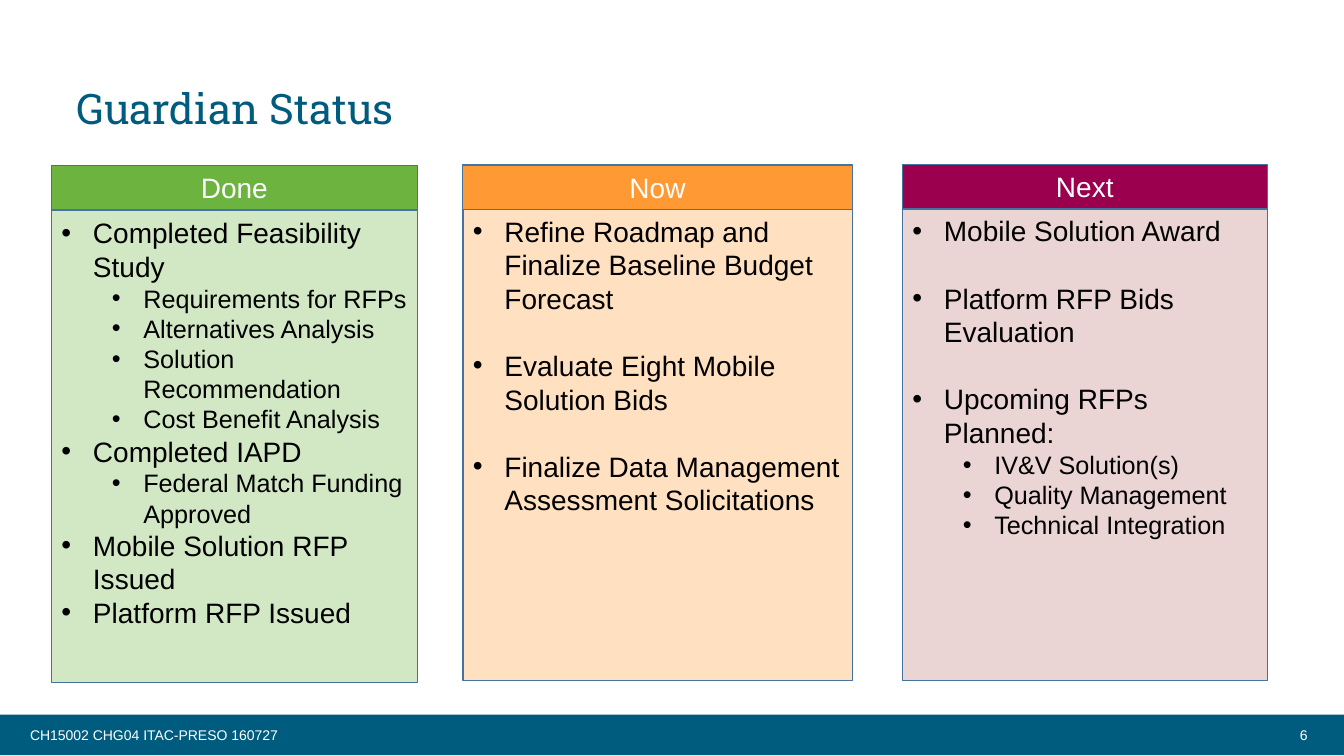
"""Build the Guardian Status slide with its Done, Now and Next columns."""
from dataclasses import dataclass

from lxml import etree
from pptx import Presentation
from pptx import util as u
from pptx.dml.color import RGBColor
from pptx.enum import shapes, text
from pptx.oxml.ns import qn


@dataclass(frozen=True)
class Theme:
    heading_font: str = "Roboto Slab"
    body_font: str = "Arial"
    teal: str = "005C7E"
    outline: str = "43739E"
    white: str = "FFFFFF"
    black: str = "000000"
    green: str = "6CB33F"
    orange: str = "FF9933"
    plum: str = "9A004D"
    rose: str = "EBD4D4"
    title_size: float = 30
    item_size: float = 20
    subitem_size: float = 18
    footer_size: float = 10


@dataclass(frozen=True)
class Item:
    text: str
    level: int = 0
    gap: float = 0


@dataclass(frozen=True)
class Column:
    heading: str
    placeholder: int
    left: float
    top: float
    body_top: float
    width: float
    colour: str
    body_colour: str
    opacity: int
    items: tuple[Item, ...]


@dataclass(frozen=True)
class FooterText:
    text: str
    left: float
    width: float
    alignment: text.PP_ALIGN


THEME = Theme()
HEADING_HEIGHT = 31.7
BODY_HEIGHT = 337
INDENT = 22.5
LEVEL_STEP = 36
BLANK_LINE = 24

COLUMNS = (
    Column("Done", 1, 36.7, 118.3, 150.4, 261.4, THEME.green, THEME.green, 30, (
        Item("Completed Feasibility Study"),
        Item("Requirements for RFPs", 1),
        Item("Alternatives Analysis", 1),
        Item("Solution Recommendation", 1),
        Item("Cost Benefit Analysis", 1),
        Item("Completed IAPD"),
        Item("Federal Match Funding Approved", 1),
        Item("Mobile Solution RFP Issued"),
        Item("Platform RFP Issued"),
    )),
    Column("Now", 2, 330.6, 118, 149.3, 278.2, THEME.orange, THEME.orange, 30, (
        Item("Refine Roadmap and Finalize Baseline Budget Forecast"),
        Item("Evaluate Eight Mobile Solution Bids", gap=BLANK_LINE),
        Item("Finalize Data Management Assessment Solicitations", gap=BLANK_LINE),
    )),
    Column("Next", 3, 644.5, 117.5, 149.2, 260.8, THEME.plum, THEME.rose, 100, (
        Item("Mobile Solution Award"),
        Item("Platform RFP Bids Evaluation", gap=BLANK_LINE),
        Item("Upcoming RFPs Planned:", gap=BLANK_LINE),
        Item("IV&V Solution(s)", 1),
        Item("Quality Management", 1),
        Item("Technical Integration", 1),
    )),
)

FOOTERS = (
    FooterText("CH15002 CHG04 ITAC-PRESO 160727", 14.4, 656, text.PP_ALIGN.LEFT),
    FooterText("6", 779, 162, text.PP_ALIGN.RIGHT),
)


def place(shape, left: float, top: float, width: float, height: float) -> None:
    shape.left, shape.top = u.Pt(left), u.Pt(top)
    shape.width, shape.height = u.Pt(width), u.Pt(height)


def paint(shape, colour: str, opacity: int = 100, outlined: bool = True) -> None:
    shape.fill.solid()
    shape.fill.fore_color.rgb = RGBColor.from_string(colour)
    if opacity < 100:
        fill_colour = shape.fill._xPr.find(".//" + qn("a:srgbClr"))
        etree.SubElement(fill_colour, qn("a:alpha"), val=str(opacity * 1000))
    if outlined:
        shape.line.color.rgb = RGBColor.from_string(THEME.outline)
        shape.line.width = u.Pt(1)
    else:
        shape.line.fill.background()


def add_run(paragraph, words: str, size: float, colour: str, font: str = THEME.body_font) -> None:
    run = paragraph.add_run()
    run.text = words
    run.font.name = font
    run.font.size = u.Pt(size)
    run.font.bold = False
    run.font.color.rgb = RGBColor.from_string(colour)


def add_rectangle(slide, left: float, top: float, width: float, height: float):
    shape = slide.shapes.add_shape(
        shapes.MSO_SHAPE.RECTANGLE, u.Pt(left), u.Pt(top), u.Pt(width), u.Pt(height))
    shape.shadow.inherit = False
    return shape


def add_bullet(paragraph, level: int) -> None:
    paragraph.level = level
    properties = paragraph._p.get_or_add_pPr()
    properties.set("marL", str(u.Pt(INDENT + LEVEL_STEP * level)))
    properties.set("indent", str(u.Pt(-INDENT)))
    etree.SubElement(properties, qn("a:buFont"), typeface=THEME.body_font)
    etree.SubElement(properties, qn("a:buChar"), char="•")


def fill_title(slide) -> None:
    title = slide.shapes.title
    place(title, 47.5, 51, 847, 57)
    frame = title.text_frame
    frame.auto_size = text.MSO_AUTO_SIZE.NONE
    frame.vertical_anchor = text.MSO_ANCHOR.MIDDLE
    paragraph = frame.paragraphs[0]
    paragraph.alignment = text.PP_ALIGN.LEFT
    paragraph.line_spacing = 0.9
    add_run(paragraph, "Guardian Status", THEME.title_size, THEME.teal, THEME.heading_font)


def add_column(slide, column: Column) -> None:
    heading = add_rectangle(slide, column.left, column.top, column.width, HEADING_HEIGHT)
    paint(heading, column.colour)
    heading.text_frame.vertical_anchor = text.MSO_ANCHOR.MIDDLE
    paragraph = heading.text_frame.paragraphs[0]
    paragraph.alignment = text.PP_ALIGN.CENTER
    add_run(paragraph, column.heading, THEME.item_size, THEME.white)

    body = slide.placeholders[column.placeholder]
    place(body, column.left, column.body_top, column.width, BODY_HEIGHT)
    paint(body, column.body_colour, column.opacity)
    frame = body.text_frame
    frame.word_wrap = True
    frame.auto_size = text.MSO_AUTO_SIZE.NONE
    frame.vertical_anchor = text.MSO_ANCHOR.TOP
    for index, item in enumerate(column.items):
        paragraph = frame.add_paragraph() if index else frame.paragraphs[0]
        add_bullet(paragraph, item.level)
        paragraph.space_before = u.Pt(item.gap)
        size = THEME.subitem_size if item.level else THEME.item_size
        add_run(paragraph, item.text, size, THEME.black)


def add_footer(slide) -> None:
    band = add_rectangle(slide, 0, 510.5, 960, 29)
    paint(band, THEME.teal, outlined=False)
    for footer in FOOTERS:
        box = slide.shapes.add_textbox(
            u.Pt(footer.left), u.Pt(515.5), u.Pt(footer.width), u.Pt(14.4))
        box.text_frame.word_wrap = True
        paragraph = box.text_frame.paragraphs[0]
        paragraph.alignment = footer.alignment
        add_run(paragraph, footer.text, THEME.footer_size, THEME.white)


def main() -> None:
    presentation = Presentation()
    presentation.slide_width, presentation.slide_height = u.Pt(960), u.Pt(540)
    slide = presentation.slides.add_slide(presentation.slide_layouts.get_by_name("Comparison"))
    fill_title(slide)
    add_footer(slide)
    for column in COLUMNS:
        add_column(slide, column)
    spare = slide.placeholders[4]
    spare.element.getparent().remove(spare.element)
    presentation.save("out.pptx")


if __name__ == "__main__":
    main()
